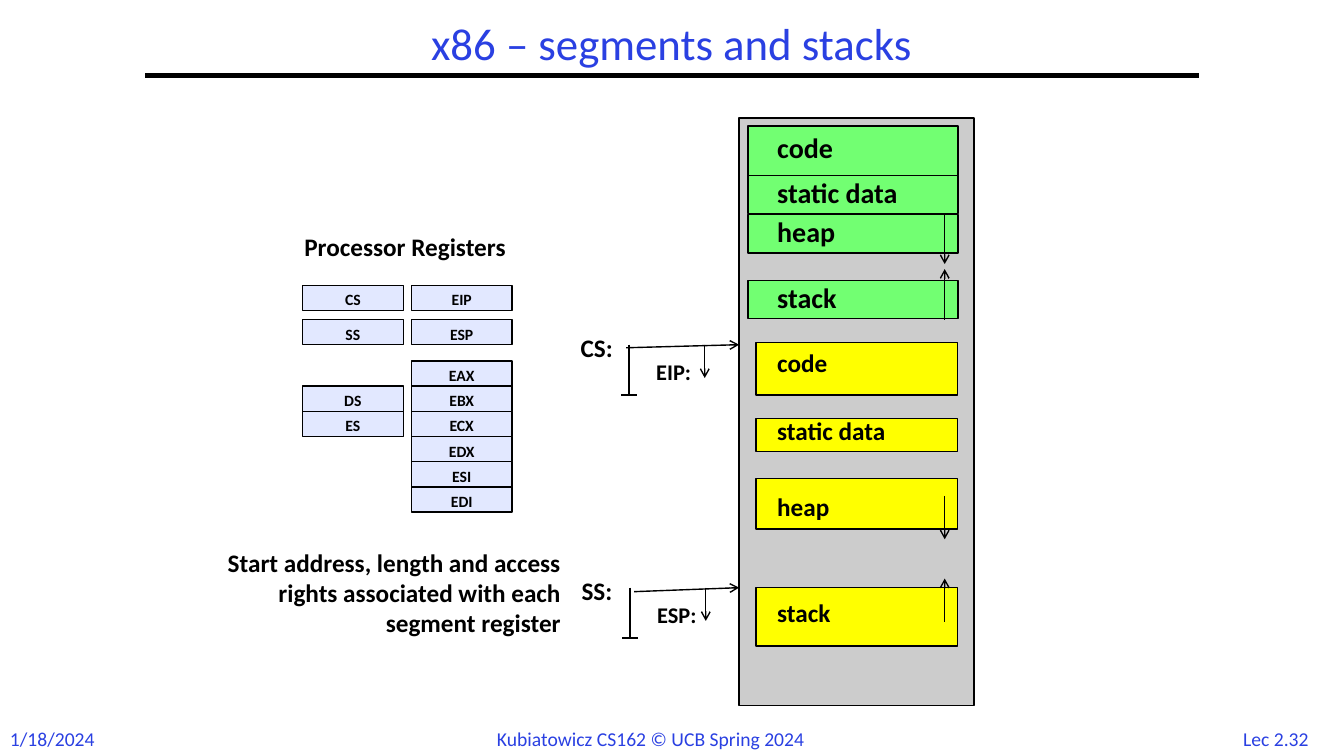
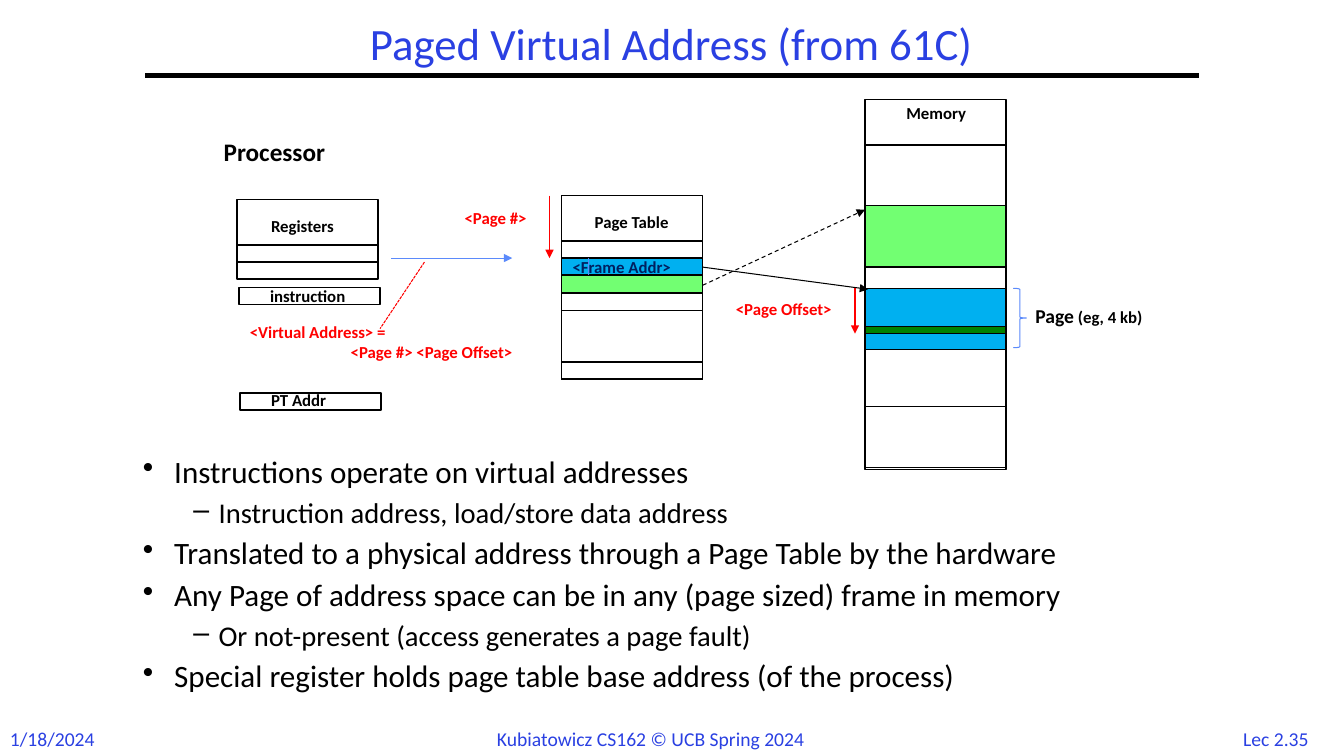
from lxml import etree
from pptx import Presentation
from pptx.dml.color import RGBColor
from pptx.enum.dml import MSO_LINE
from pptx.enum.shapes import MSO_CONNECTOR, MSO_SHAPE
from pptx.enum.text import MSO_ANCHOR, PP_ALIGN
from pptx.oxml.ns import qn
from pptx.util import Emu, Pt

PX = 9144  # 100 px to the inch
FONT = "Calibri"
BLUE, BLACK, RED, NAVY = "2A40E2", "000000", "FF0000", "002060"
LAVENDER, GRAY, GREEN, YELLOW = "E2E8FF", "CCCCCC", "72FF72", "FFFF00"
CYAN, DARK_GREEN, LIGHT_BLUE = "00B0F0", "008200", "5B8AFB"
LEFT, CENTER, RIGHT = PP_ALIGN.LEFT, PP_ALIGN.CENTER, PP_ALIGN.RIGHT
TOP, MIDDLE = MSO_ANCHOR.TOP, MSO_ANCHOR.MIDDLE
RECTANGLE, BRACE = MSO_SHAPE.RECTANGLE, MSO_SHAPE.RIGHT_BRACE
STRAIGHT = MSO_CONNECTOR.STRAIGHT
DASH, FINE_DASH = MSO_LINE.DASH, MSO_LINE.SQUARE_DOT
BLANK_LAYOUT = 6


def px(*lengths):
    return [Emu(length * PX) for length in lengths]


def color(hex_string):
    return RGBColor.from_string(hex_string)


def add_run(paragraph, text, size, ink=BLACK, bold=True):
    run = paragraph.add_run()
    run.text = text
    run.font.name = FONT
    run.font.size = Pt(size)
    run.font.bold = bold
    run.font.color.rgb = color(ink)


def set_indent(paragraph, margin, hanging=0):
    properties = paragraph._p.get_or_add_pPr()
    properties.set("marL", str(margin * PX))
    properties.set("indent", str(-hanging * PX))
    return properties


def add_box(slide, left, top, width, height, anchor=TOP):
    """Empty wrapping text box; returns its text frame."""
    frame = slide.shapes.add_textbox(*px(left, top, width, height)).text_frame
    frame.word_wrap = True
    frame.vertical_anchor = anchor
    return frame


def add_label(slide, text, left, top, width, height, size, ink=BLACK,
              bold=True, align=LEFT, anchor=TOP):
    frame = add_box(slide, left, top, width, height, anchor)
    paragraph = frame.paragraphs[0]
    paragraph.alignment = align
    add_run(paragraph, text, size, ink, bold)
    return paragraph


def add_shape(slide, left, top, width, height, fill=None, kind=RECTANGLE,
              ink=BLACK, weight=1):
    shape = slide.shapes.add_shape(kind, *px(left, top, width, height))
    shape.shadow.inherit = False
    if fill:
        shape.fill.solid()
        shape.fill.fore_color.rgb = color(fill)
    else:
        shape.fill.background()
    shape.line.color.rgb = color(ink)
    shape.line.width = Pt(weight)
    return shape


def add_line(slide, start, end, ink=BLACK, weight=1, head=None, dash=None):
    connector = slide.shapes.add_connector(STRAIGHT, *px(*start, *end))
    connector.line.color.rgb = color(ink)
    connector.line.width = Pt(weight)
    if dash:
        connector.line.dash_style = dash
    if head:
        line = connector.get_or_add_ln()
        etree.SubElement(line, qn("a:tailEnd")).set("type", head)
    etree.SubElement(connector._element.spPr, qn("a:effectLst"))


def add_bullets(slide, items, left, top, width, height):
    # level: (bullet, margin, hanging, size)
    levels = [("•", 31, 31, 22.2), ("–", 75, 25, 20.4)]
    frame = add_box(slide, left, top, width, height)
    for index, (level, text) in enumerate(items):
        paragraph = frame.add_paragraph() if index else frame.paragraphs[0]
        bullet, margin, hanging, size = levels[level]
        paragraph.level = level
        paragraph.line_spacing = 0.9
        paragraph.space_before = Pt(6)
        properties = set_indent(paragraph, margin, hanging)
        etree.SubElement(properties, qn("a:buChar")).set("char", bullet)
        add_run(paragraph, text, size, bold=False)


def add_base_slide(presentation, title, number):
    """Slide with the shared title, rule and footers."""
    slide = presentation.slides.add_slide(
        presentation.slide_layouts[BLANK_LAYOUT])
    heading = add_label(slide, title, 144, 17, 1044, 58, 32, BLUE, False,
                        CENTER, MIDDLE)
    heading.line_spacing = 0.9
    add_line(slide, (144, 75), (1189, 75), weight=3)
    for text, left, width, align in [
            ("1/18/2024", 0, 107, LEFT),
            ("Kubiatowicz CS162 © UCB Spring 2024", 483, 368, LEFT),
            (f"Lec {number}", 1217, 97, CENTER)]:
        add_label(slide, text, left, 716, width, 34, 14, BLUE, False, align)
    return slide


def add_register(slide, name, left, top):
    shape = add_shape(slide, left, top, 100, 25, LAVENDER)
    shape.text_frame.vertical_anchor = TOP
    paragraph = shape.text_frame.paragraphs[0]
    paragraph.alignment = CENTER
    add_run(paragraph, name, 11.2)


def add_segment_pointer(slide, segment, offset, x, y, start):
    """Segment register arrow, its length bar and the offset arrow."""
    add_label(slide, segment, x - 58, y - 17, 64, 40, 18)
    add_line(slide, start, (733, y), head="arrow")
    add_line(slide, (x, y), (x, y + 50))
    add_line(slide, (x - 8, y + 50), (x + 8, y + 50))
    add_line(slide, (x + 75, y), (x + 75, y + 33), head="arrow")
    add_label(slide, offset, x + 17, y + 8, 72, 37, 16)


def build_segments(presentation):
    slide = add_base_slide(presentation, "x86 – segments and stacks", "2.32")

    # Processor registers
    add_label(slide, "Processor Registers", 292, 225, 267, 40, 18)
    for left, rows in [
            (300, [("CS", 283), ("SS", 317), ("DS", 383), ("ES", 408)]),
            (408, [("EIP", 283), ("ESP", 317)])]:
        for name, top in rows:
            add_register(slide, name, left, top)
    for row, name in enumerate(["EAX", "EBX", "ECX", "EDX", "ESI", "EDI"]):
        add_register(slide, name, 408, 358 + 25 * row)
    add_label(slide, "Start address, length and access rights associated "
              "with each segment register", 187, 538, 379, 101, 18,
              align=RIGHT)

    # Memory: name, top, height, top of the label
    add_shape(slide, 733, 117, 233, 583, GRAY)
    for left, fill, size, segments in [
            (742, GREEN, 20, [("code", 125, 49, 125),
                              ("static data", 174, 38, 169),
                              ("heap", 213, 38, 208),
                              ("stack", 278, 38, 273)]),
            (750, YELLOW, 18, [("code", 340, 52, 340),
                               ("static data", 415, 33, 407),
                               ("heap", 475, 50, 483),
                               ("stack", 583, 58, 588)])]:
        for name, top, height, label_top in segments:
            add_shape(slide, left, top, 950 - left, height, fill)
            add_label(slide, name, 761, label_top, 159, 44, size)

    # Growth of heaps and stacks
    for start, end in [(213, 262), (317, 267), (492, 535), (617, 574)]:
        add_line(slide, (937, start), (937, end), head="arrow")

    add_segment_pointer(slide, "CS:", "EIP:", 624, 342, (621, 345))
    add_segment_pointer(slide, "SS:", "ESP:", 625, 583, (629, 587))


def build_paging(presentation):
    slide = add_base_slide(presentation, "Paged Virtual Address (from 61C)",
                           "2.35")
    add_bullets(slide, [
        (0, "Instructions operate on virtual addresses"),
        (1, "Instruction address, load/store data address"),
        (0, "Translated to a physical address through a Page Table by the "
            "hardware"),
        (0, "Any Page of address space can be in any (page sized) frame in "
            "memory"),
        (1, "Or not-present (access generates a page fault)"),
        (0, "Special register holds page table base address (of the "
            "process)"),
    ], 132, 448, 1043, 273)

    # Cells of processor, page table and memory: top, height, fill
    for left, cells in [
            (235, [(198, 79, None), (243, 17, None)]),
            (237, [(285, 17, None)]),
            (238, [(390, 17, None)]),
            (557, [(194, 182, None), (239, 17, None), (256, 17, CYAN),
                   (273, 17, GREEN), (291, 17, None), (359, 17, None)]),
            (858, [(99, 367, None), (144, 61, None), (204, 61, GREEN),
                   (286, 61, CYAN), (324, 7, DARK_GREEN),
                   (403, 61, None)])]:
        for top, height, fill in cells:
            add_shape(slide, left, top, 140, height, fill)

    # Arrows and the page brace
    thin = 0.75
    for start, end, ink, head, dash in [
            ((388, 256), (508, 256), LIGHT_BLUE, "triangle", None),
            ((421, 260), (377, 326), RED, None, FINE_DASH),
            ((545, 194), (545, 256), RED, "triangle", None),
            ((848, 286), (848, 331), RED, "triangle", None),
            ((697, 265), (861, 287), BLACK, "triangle", None),
            ((584, 256), (584, 273), LIGHT_BLUE, None, None),
            ((697, 283), (858, 208), BLACK, "triangle", DASH)]:
        add_line(slide, start, end, ink, thin, head, dash)
    add_shape(slide, 1005, 286, 13, 59, None, BRACE, LIGHT_BLUE, thin)

    # Labels
    add_label(slide, "Processor", 212, 130, 144, 40, 18)
    for text, left, top, width, ink in [
            ("Registers", 259, 209, 97, BLACK),
            ("instruction", 258, 279, 107, BLACK),
            ("PT Addr", 259, 382, 85, BLACK),
            ("Page Table", 580, 205, 108, BLACK),
            ("Memory", 889, 97, 85, BLACK),
            ("<Page #>", 451, 201, 99, RED),
            ("<Frame Addr>", 558, 250, 138, NAVY),
            ("<Page Offset>", 720, 291, 138, RED)]:
        add_label(slide, text, left, top, width, 30, 12, ink)

    address = add_box(slide, 238, 314, 328, 50)
    add_run(address.paragraphs[0], "<Virtual Address> =", 12, RED)
    parts = address.add_paragraph()
    set_indent(parts, 100)
    add_run(parts, "<Page #> <Page Offset>", 12, RED)

    page = add_label(slide, "Page", 1017, 297, 146, 34, 14)
    add_run(page, " (eg, 4 kb)", 12)


def main():
    presentation = Presentation()
    presentation.slide_width, presentation.slide_height = px(1333, 750)
    build_segments(presentation)
    build_paging(presentation)
    presentation.save("out.pptx")


if __name__ == "__main__":
    main()
